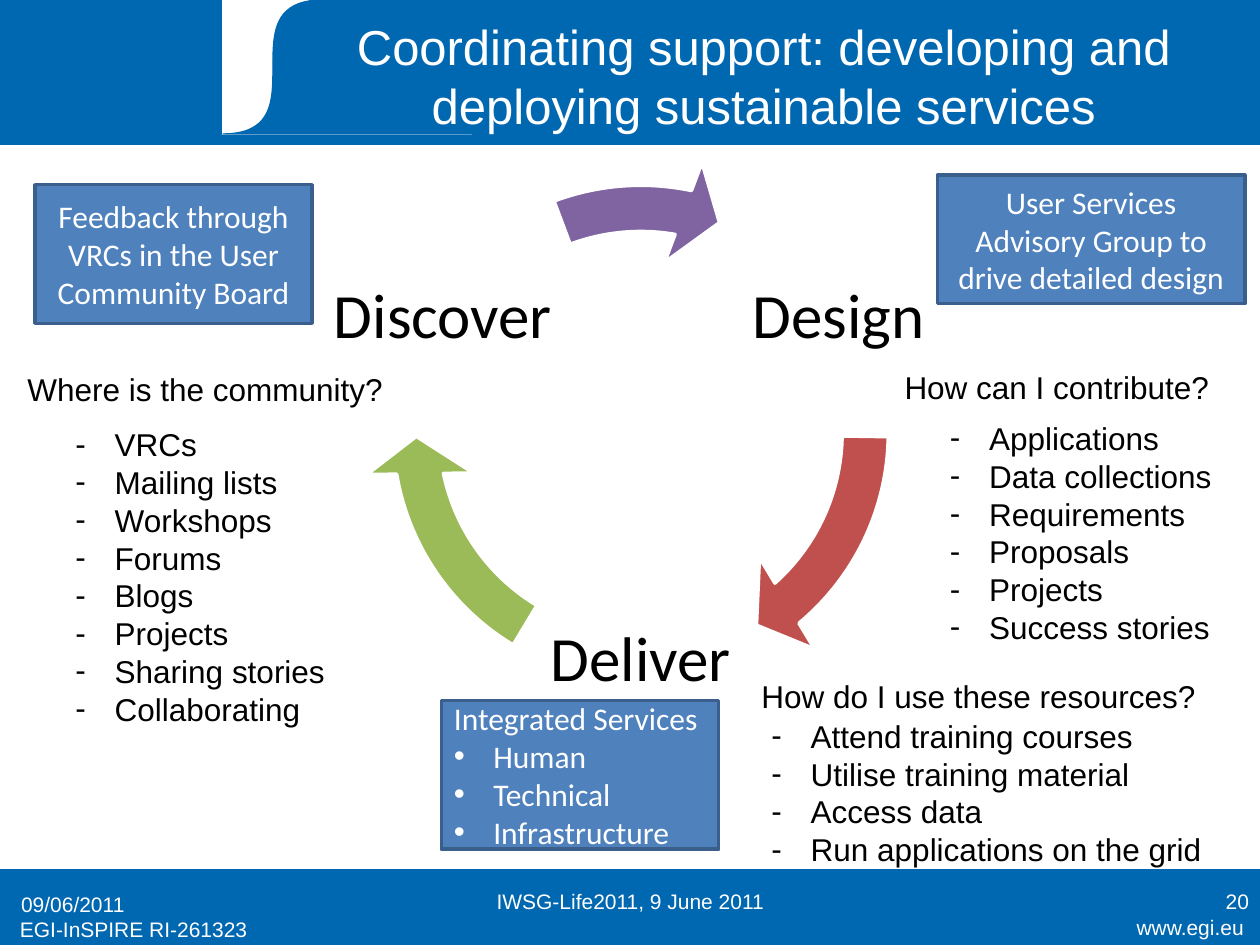
from dataclasses import dataclass

from lxml.etree import SubElement
from pptx import Presentation
from pptx.dml.color import RGBColor
from pptx.enum.shapes import MSO_SHAPE
from pptx.enum.text import MSO_ANCHOR, MSO_AUTO_SIZE, PP_ALIGN
from pptx.oxml.ns import qn
from pptx.util import Pt

BLUE, WHITE, BLACK = "0067B1", "FFFFFF", "000000"
PANEL_FILL, PANEL_LINE = "4F81BD", "3A5F8C"
LIST_INDENT = 22.5
LEFT, CENTER, RIGHT = PP_ALIGN.LEFT, PP_ALIGN.CENTER, PP_ALIGN.RIGHT
TOP, MIDDLE = MSO_ANCHOR.TOP, MSO_ANCHOR.MIDDLE


@dataclass(frozen=True)
class Box:
    left: float
    top: float
    width: float
    height: float

    def lengths(self) -> tuple:
        return Pt(self.left), Pt(self.top), Pt(self.width), Pt(self.height)


@dataclass(frozen=True)
class Style:
    font: str = "Arial"
    size: float = 18
    color: str = BLACK
    align: PP_ALIGN = LEFT
    anchor: MSO_ANCHOR = TOP
    line_spacing: float = 1.0
    side_margin: float = 7.2
    wrap: bool = True
    grow: bool = False


@dataclass(frozen=True)
class Passage:
    box: Box
    lines: tuple
    style: Style
    bullet: str = ""
    first_bullet: int = 0


@dataclass(frozen=True)
class CycleArrow:
    color: str
    head: float
    start: float


HEADING = Style(wrap=False, grow=True)
LISTING = Style(grow=True)
STAGE = Style("Calibri", 36, align=CENTER, anchor=MIDDLE, line_spacing=0.9,
              side_margin=3.6, wrap=False)
PANEL = Style("Calibri", 18, WHITE, CENTER, MIDDLE)
PANEL_LIST = Style("Calibri", 18, WHITE, LEFT, MIDDLE)
TITLE = Style(size=28, color=WHITE, align=CENTER, anchor=MIDDLE)
FOOT_LEFT = Style(size=12, color=WHITE, anchor=MIDDLE)
FOOT_CENTER = Style(size=12, color=WHITE, align=CENTER, anchor=MIDDLE)
FOOT_RIGHT = Style(size=12, color=WHITE, align=RIGHT, anchor=MIDDLE)

CYCLE_BOX = Box(207.4, 88.6, 317.5, 317.5)
CYCLE = (
    CycleArrow("C0504D", 29.61, 0.53),
    CycleArrow("9BBB59", 101.7, 72.62),
    CycleArrow("8064A2", 168.55, 149.69),
)

PANELS = (
    Passage(Box(252.3, 400.3, 158.4, 85),
            ("Integrated Services", "Human", "Technical", "Infrastructure"),
            PANEL_LIST, "•", 1),
    Passage(Box(20, 105.6, 158.4, 79.2),
            ("Feedback through VRCs in the User Community Board",), PANEL),
    Passage(Box(535.7, 100.1, 175.7, 73.4),
            ("User Services Advisory Group to drive detailed design",), PANEL),
)

PASSAGES = (
    Passage(Box(411.8, 114.5, 134.6, 134.6), ("Design",), STAGE),
    Passage(Box(298.8, 310.3, 134.6, 134.6), ("Deliver",), STAGE),
    Passage(Box(185.8, 114.5, 134.6, 134.6), ("Discover",), STAGE),
    Passage(Box(8.6, 207.7, 219.6, 28.8), ("Where is the community?",), HEADING),
    Passage(Box(509.8, 206.6, 190.1, 28.8), ("How can I contribute?",), HEADING),
    Passage(Box(428, 383.3, 265, 28.8), ("How do I use these resources?",), HEADING),
    Passage(Box(36, 239.5, 158.4, 203.8),
            ("VRCs", "Mailing lists", "Workshops", "Forums", "Blogs", "Projects",
             "Sharing stories", "Collaborating"), LISTING, "-"),
    Passage(Box(535.7, 235.9, 165.6, 138.2),
            ("Applications", "Data collections", "Requirements", "Proposals",
             "Projects", "Success stories"), LISTING, "-"),
    Passage(Box(433.7, 406.1, 262.1, 94.3),
            ("Attend training courses", "Utilise training material", "Access data",
             "Run applications on the grid"), LISTING, "-"),
    Passage(Box(5, 502, 167.8, 28.8), ("09/06/2011",), FOOT_LEFT),
    Passage(Box(246.2, 500.4, 228.2, 28.8), ("IWSG-Life2011, 9 June 2011",), FOOT_CENTER),
    Passage(Box(553, 500.4, 167.8, 28.8), ("20",), FOOT_RIGHT),
    Passage(Box(604.1, 518.4, 113.8, 22.3), ("www.egi.eu",), FOOT_RIGHT),
    Passage(Box(4.3, 519.8, 180, 22.3), ("EGI-InSPIRE RI-261323",), FOOT_LEFT),
)


def rgb(color: str) -> RGBColor:
    return RGBColor.from_string(color)


def paint(shape, fill: str, line: str, line_width: float) -> None:
    shape.shadow.inherit = False
    shape.fill.solid()
    shape.fill.fore_color.rgb = rgb(fill)
    shape.line.color.rgb = rgb(line)
    shape.line.width = Pt(line_width)


def add_bullet(paragraph, character: str) -> None:
    properties = paragraph._p.get_or_add_pPr()
    properties.set("marL", str(Pt(LIST_INDENT)))
    properties.set("indent", str(-Pt(LIST_INDENT)))
    SubElement(properties, qn("a:buFont")).set("typeface", "Arial")
    SubElement(properties, qn("a:buChar")).set("char", character)


def write(shape, passage: Passage) -> None:
    style, frame = passage.style, shape.text_frame
    frame.text = "\n".join(passage.lines)
    frame.word_wrap = style.wrap
    frame.auto_size = (MSO_AUTO_SIZE.SHAPE_TO_FIT_TEXT if style.grow
                       else MSO_AUTO_SIZE.NONE)
    frame.vertical_anchor = style.anchor
    frame.margin_left = frame.margin_right = Pt(style.side_margin)
    for index, paragraph in enumerate(frame.paragraphs):
        paragraph.alignment = style.align
        paragraph.line_spacing = style.line_spacing
        if passage.bullet and index >= passage.first_bullet:
            add_bullet(paragraph, passage.bullet)
        for run in paragraph.runs:
            run.font.name = style.font
            run.font.size = Pt(style.size)
            run.font.color.rgb = rgb(style.color)


def add_rectangle(slide, box: Box, fill: str, line: str, line_width: float):
    rectangle = slide.shapes.add_shape(MSO_SHAPE.RECTANGLE, *box.lengths())
    paint(rectangle, fill, line, line_width)
    return rectangle


def add_header_curve(slide, box: Box, steps: int = 40) -> None:
    """Fill the part of the box right of an S-shaped edge."""
    bend = 0.4 * box.width
    right, bottom = box.left + box.width, box.top + box.height
    edge = []
    for step in range(steps + 1):
        t = step / steps
        x = box.left + bend * (3 * t * (1 - t) ** 2 + t ** 3)
        y = bottom - box.height * (3 * t ** 2 * (1 - t) + t ** 3)
        edge.append((Pt(x), Pt(y)))
    builder = slide.shapes.build_freeform(Pt(right), Pt(box.top))
    builder.add_line_segments([(Pt(right), Pt(bottom)), *edge], close=True)
    paint(builder.convert_to_shape(), BLUE, BLUE, 0.75)


def add_cycle_arrow(slide, arrow: CycleArrow) -> None:
    shape = slide.shapes.add_shape(MSO_SHAPE.CIRCULAR_ARROW, *CYCLE_BOX.lengths())
    for index, value in enumerate((0.083, 5.766, arrow.head, arrow.start, 0.096)):
        shape.adjustments[index] = value
    paint(shape, arrow.color, WHITE, 2)


def add_title(slide, passage: Passage) -> None:
    title = slide.shapes.title
    title.left, title.top, title.width, title.height = passage.box.lengths()
    write(title, passage)
    title.element.getparent().append(title.element)  # in front of the header band


def main() -> None:
    presentation = Presentation()
    presentation.slide_width, presentation.slide_height = Pt(720), Pt(540)
    slide = presentation.slides.add_slide(presentation.slide_layouts[5])

    add_rectangle(slide, Box(0, 496.8, 720, 43.2), BLUE, BLUE, 0)
    add_rectangle(slide, Box(0, 0, 720, 82.4), BLUE, BLUE, 0.75)
    add_rectangle(slide, Box(127.4, 0, 141.8, 77), WHITE, WHITE, 0.75)
    # Wider than the white notch, so no white edge shows on its right
    add_header_curve(slide, Box(127.4, 0, 143, 76.6))
    add_title(slide, Passage(
        Box(161.3, 9, 550.1, 68.4),
        ("Coordinating support: developing and deploying sustainable services",), TITLE))

    for arrow in CYCLE:
        add_cycle_arrow(slide, arrow)
    for panel in PANELS:
        write(add_rectangle(slide, panel.box, PANEL_FILL, PANEL_LINE, 2), panel)
    for passage in PASSAGES:
        write(slide.shapes.add_textbox(*passage.box.lengths()), passage)

    presentation.save("out.pptx")


if __name__ == "__main__":
    main()
